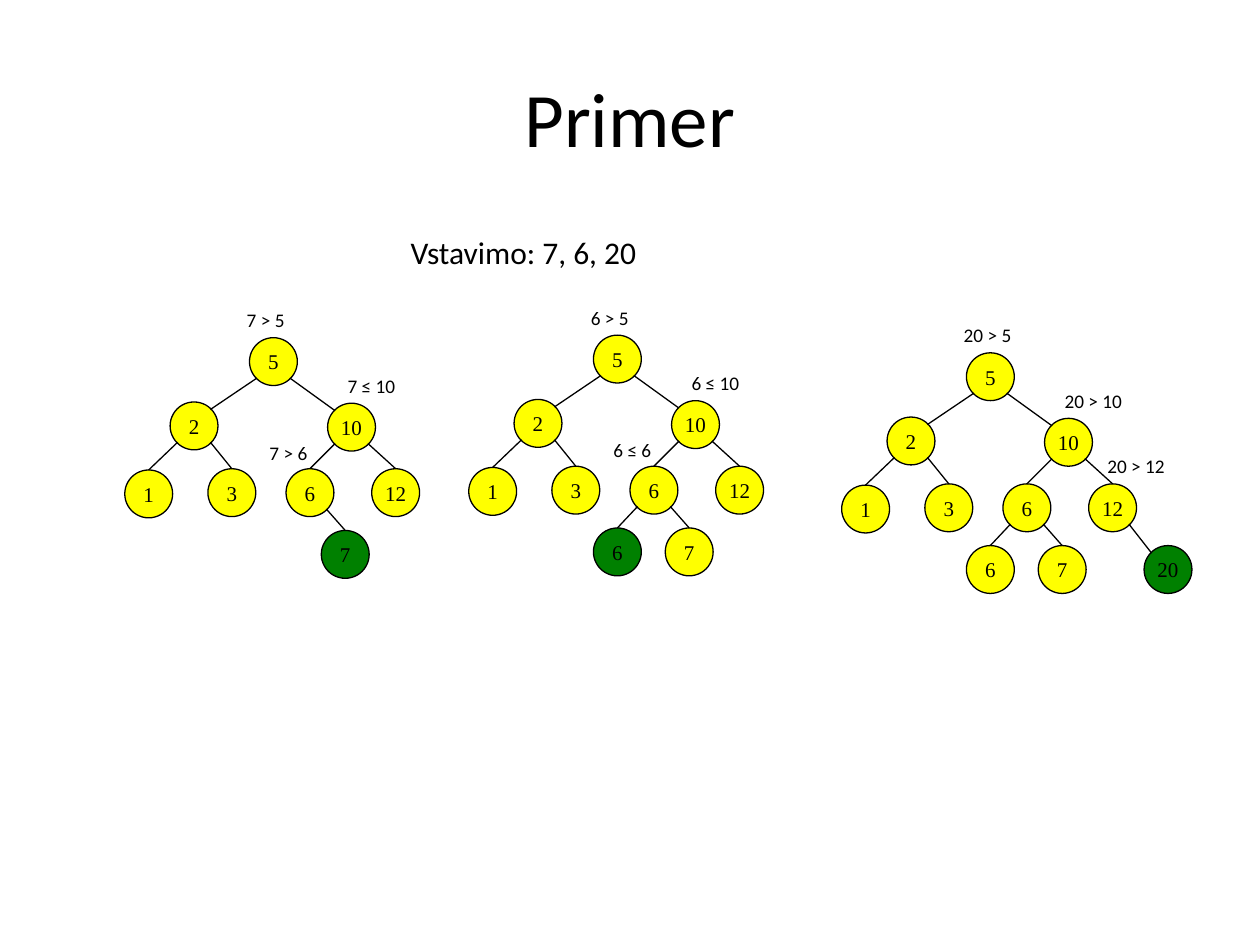
"""Builds a slide with three steps of inserting keys into a binary search tree."""
from lxml import etree
from pptx import Presentation
from pptx import util as u
from pptx.dml.color import RGBColor
from pptx.enum import shapes, text
from pptx.oxml import ns

BLACK = RGBColor(0x00, 0x00, 0x00)
YELLOW = RGBColor(0xFF, 0xFF, 0x00)
GREEN = RGBColor(0x00, 0x80, 0x00)

SIZE = 0.38
CORNER = 0.06

# slot: (key, dx, dy, parent slot, edge ends on the child's corner)
BASE = {
    "root": ("5", 0, 0, None, False),
    "l": ("2", -0.63, 0.51, "root", True),
    "r": ("10", 0.62, 0.52, "root", True),
    "rl": ("6", 0.29, 1.04, "r", False),
    "rr": ("12", 0.97, 1.04, "r", False),
    "ll": ("1", -0.99, 1.05, "l", False),
    "lr": ("3", -0.33, 1.04, "l", False),
}
ADDED = {
    "rlr": ("7", 0.57, 1.53, "rl", False),
    "rll": ("6", 0, 1.53, "rl", False),
    "rrr": ("20", 1.41, 1.53, "rr", True),
}
LABEL_OFFSETS = {
    "root": (-0.12, -0.28),
    "r": (0.68, 0.24),
    "rl": (0.06, 0.77),
    "rr": (1.02, 0.76),
}
STEPS = [
    (1.98, 2.68, ["rlr"], {"root": "7 > 5", "r": "7 ≤ 10", "rl": "7 > 6"}),
    (4.71, 2.66, ["rlr", "rll"], {"root": "6 > 5", "r": "6 ≤ 10", "rl": "6 ≤ 6"}),
    (7.67, 2.80, ["rlr", "rll", "rrr"],
     {"root": "20 > 5", "r": "20 > 10", "rr": "20 > 12"}),
]


class Deck:
    """Holds the style and the current slide."""

    def __init__(self, prs):
        self.s = prs.slides.add_slide(prs.slide_layouts[5])
        self.body_font = "Calibri"
        self.node_font = "Times New Roman"

    def style(self, p, size, font):
        for r in p.runs:
            r.font.size = u.Pt(size)
            r.font.name = font
            r.font.color.rgb = BLACK

    def title(self, words):
        sp = self.s.shapes.title
        sp.left, sp.top, sp.width, sp.height = map(u.Inches, (0.5, 0.3, 9, 1.25))
        tf = sp.text_frame
        tf.text = words
        tf.vertical_anchor = text.MSO_ANCHOR.MIDDLE
        tf.paragraphs[0].alignment = text.PP_ALIGN.CENTER
        self.style(tf.paragraphs[0], 44, self.body_font)

    def label(self, words, x, y, w=0.79, h=0.29, size=11):
        tf = self.s.shapes.add_textbox(*map(u.Inches, (x, y, w, h))).text_frame
        tf.text = words
        tf.word_wrap = True
        tf.auto_size = text.MSO_AUTO_SIZE.SHAPE_TO_FIT_TEXT
        self.style(tf.paragraphs[0], size, self.body_font)

    def node(self, key, x, y, fill):
        sp = self.s.shapes.add_shape(
            shapes.MSO_SHAPE.OVAL, *map(u.Inches, (x, y, SIZE, SIZE)))
        sp.shadow.inherit = False
        sp.fill.solid()
        sp.fill.fore_color.rgb = fill
        sp.line.color.rgb = BLACK
        sp.line.width = u.Pt(0.75)
        tf = sp.text_frame
        tf.text = key
        tf.word_wrap = False
        tf.vertical_anchor = text.MSO_ANCHOR.MIDDLE
        tf.paragraphs[0].alignment = text.PP_ALIGN.CENTER
        self.style(tf.paragraphs[0], 12, self.node_font)

    def edge(self, x1, y1, x2, y2):
        c = self.s.shapes.add_connector(
            shapes.MSO_CONNECTOR.STRAIGHT, *map(u.Inches, (x1, y1, x2, y2)))
        c.line.color.rgb = BLACK
        c.line.width = u.Pt(0.75)
        etree.SubElement(c._element.spPr, ns.qn("a:effectLst"))

    def tree(self, x, y, added, labels):
        nodes = {**BASE, **{slot: ADDED[slot] for slot in added}}
        for slot, (key, dx, dy, parent, corner) in nodes.items():
            self.node(key, x + dx, y + dy, GREEN if slot == added[-1] else YELLOW)
            if parent:
                px, py = nodes[parent][1:3]
                near, far = CORNER, SIZE - CORNER
                start, end = (near, far) if dx < px else (far, near)
                self.edge(x + px + start, y + py + far,
                          x + dx + (end if corner else SIZE / 2),
                          y + dy + (near if corner else 0))
        for slot, words in labels.items():
            dx, dy = LABEL_OFFSETS[slot]
            self.label(words, x + dx, y + dy)


def main():
    prs = Presentation()
    prs.slide_width, prs.slide_height = u.Inches(10), u.Inches(7.5)
    deck = Deck(prs)
    deck.title("Primer")
    deck.label("Vstavimo: 7, 6, 20", 3.16, 1.8, 2.42, 0.4, 18)
    for step in STEPS:
        deck.tree(*step)
    prs.save("out.pptx")


if __name__ == "__main__":
    main()
